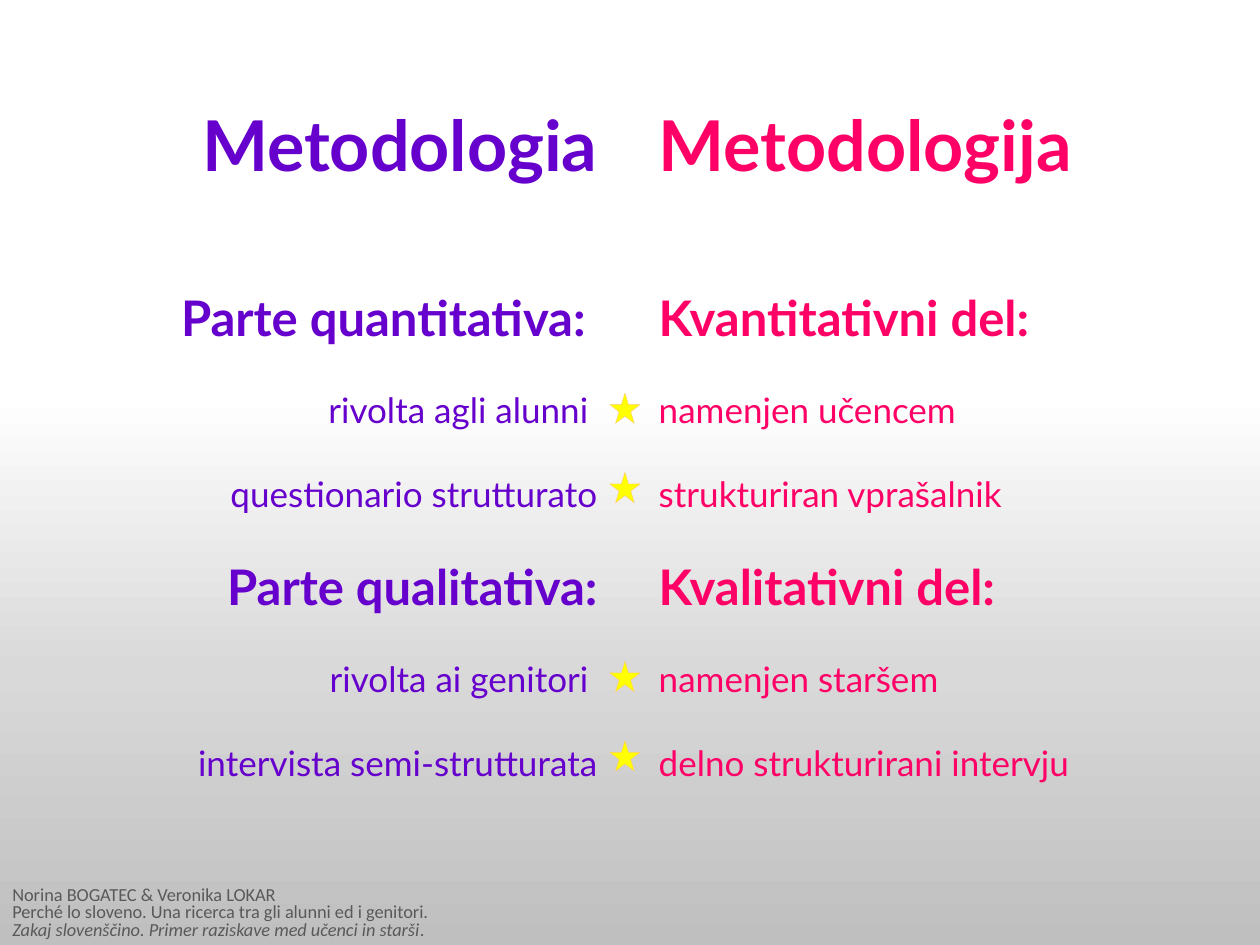
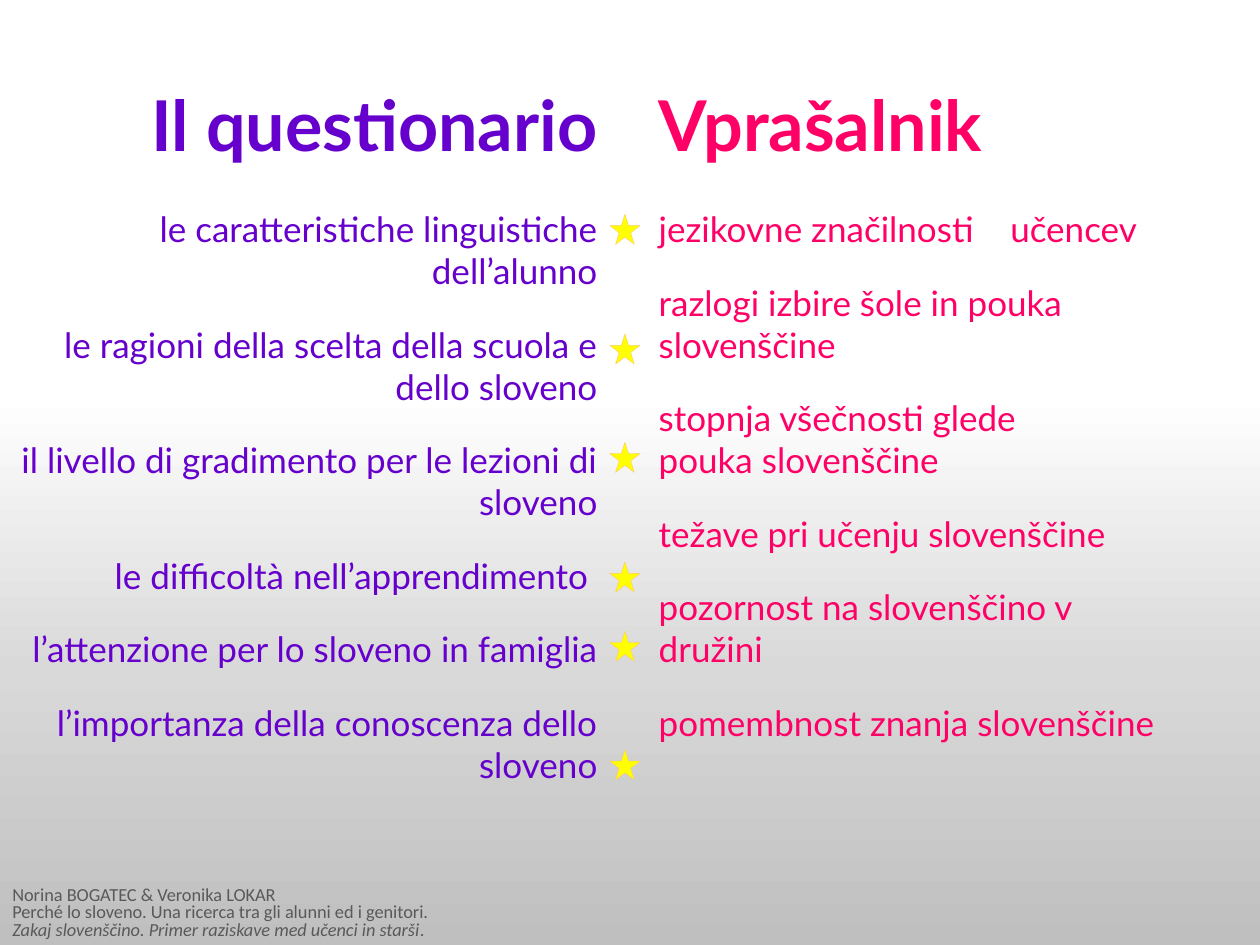
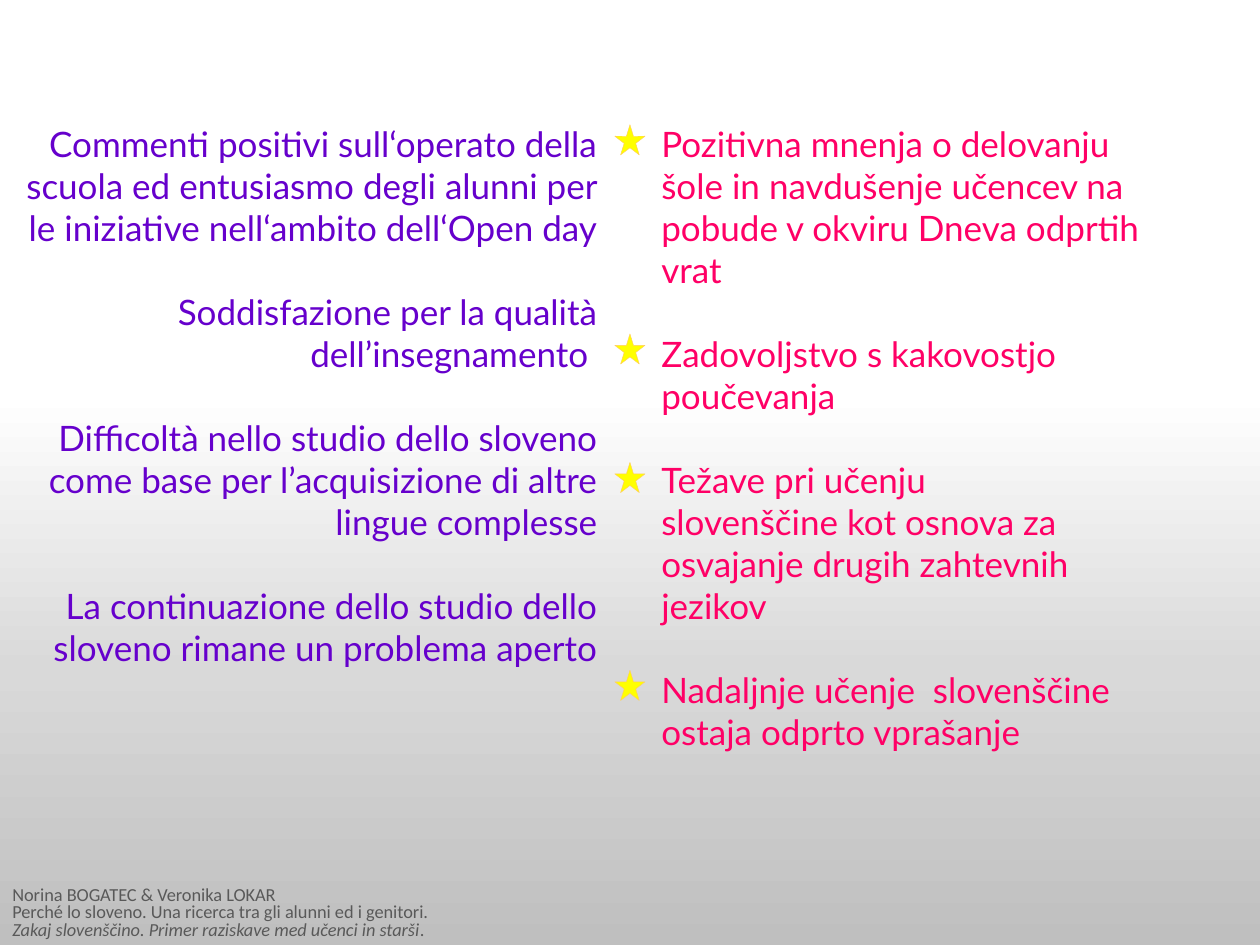
from copy import deepcopy

from pptx import Presentation
from pptx.dml.color import RGBColor
from pptx.enum.shapes import MSO_SHAPE as Shape
from pptx.enum.text import MSO_ANCHOR as Anchor, PP_ALIGN as Align
from pptx.oxml.ns import qn
from pptx.util import Inches, Pt
from lxml.etree import SubElement

WIDTH, HEIGHT = 10, 7.5
COLORS = {
    "italian": "6600CC",
    "slovene": "FF0066",
    "footer": "595959",
    "star": "FFFF00",
    "star_edge": "FFCC66",
    "paper": "FFFFFF",
    "band_middle": "D9D9D9",
    "band_end": "BFBFBF",
}
STYLES = {
    "title": {"size": Pt(40), "bold": True, "before": 0},
    "first_heading": {"size": Pt(28), "bold": True, "before": 58},
    "heading": {"size": Pt(28), "bold": True, "before": 24},
    "item": {"size": Pt(20), "bold": False, "before": 24},
    "close_item": {"size": Pt(20), "bold": False, "before": 18},
    "opening": {"size": Pt(20), "bold": False, "before": 0},
}
COLUMN_WIDTH = 4.84
RIGHT_COLUMN = 5.13
STAR_SIZE = 0.24
TAB_STOP = 2.79
FOOTER = [
    [("Norina BOGATEC & Veronika LOKAR", False)],
    [("Perché lo sloveno. Una ricerca tra gli alunni ed i genitori.", False)],
    [("Zakaj slovenščino. Primer raziskave med učenci in starši", True), (".", False)],
]

METHOD_STYLES = ["title", "first_heading", "item", "item", "heading", "item", "item"]
SLIDES = [
    {
        "top": 0.76, "height": 5.75, "right": RIGHT_COLUMN, "right_width": 4.34,
        "italian": list(zip(METHOD_STYLES, [
            "Metodologia",
            "Parte quantitativa: ",
            "rivolta agli alunni ",
            "questionario strutturato",
            "Parte qualitativa:",
            "rivolta ai genitori ",
            "intervista semi-strutturata",
        ])),
        "slovene": list(zip(METHOD_STYLES, [
            "Metodologija",
            "Kvantitativni del:",
            "namenjen učencem",
            "strukturiran vprašalnik",
            "Kvalitativni del:",
            "namenjen staršem",
            "delno strukturirani intervju",
        ])),
        "star_left": 4.84, "star_tops": [3.12, 3.75, 5.25, 5.88],
    },
    {
        "top": 0.6, "height": 5.75, "right": RIGHT_COLUMN, "right_width": 4.34,
        "italian": [
            ("title", "Il questionario"),
            ("item", "le caratteristiche linguistiche dell’alunno"),
            ("close_item", "le ragioni della scelta della scuola e dello sloveno"),
            ("close_item", "il livello di gradimento per le lezioni di sloveno"),
            ("close_item", "le difficoltà nell’apprendimento "),
            ("close_item", "l’attenzione per lo sloveno in famiglia"),
            ("close_item", "l’importanza della conoscenza dello sloveno"),
        ],
        "slovene": [
            ("title", "Vprašalnik"),
            ("item", "jezikovne značilnosti\tučencev"),
            ("close_item", "razlogi izbire šole in pouka slovenščine"),
            ("close_item", "stopnja všečnosti glede"),
            ("opening", "pouka slovenščine"),
            ("close_item", "težave pri učenju slovenščine"),
            ("close_item", "pozornost na slovenščino v družini"),
            ("close_item", "pomembnost znanja slovenščine"),
        ],
        "star_left": 4.84, "star_tops": [1.7, 2.65, 3.51, 4.46, 5.01, 5.95],
    },
    {
        "top": 0.92, "height": 5.43, "right": RIGHT_COLUMN + 0.02, "right_width": 4.18,
        "italian": [
            ("opening", "Commenti positivi sull‘operato della scuola ed entusiasmo "
                        "degli alunni per le iniziative nell‘ambito dell‘Open day"),
            ("item", "Soddisfazione per la qualità dell’insegnamento "),
            ("item", "Difficoltà nello studio dello sloveno come base per "
                     "l’acquisizione di altre lingue complesse"),
            ("item", "La continuazione dello studio dello sloveno rimane un problema aperto"),
        ],
        "slovene": [
            ("opening", "Pozitivna mnenja o delovanju šole in navdušenje učencev "
                        "na pobude v okviru Dneva odprtih vrat"),
            ("item", "Zadovoljstvo s kakovostjo poučevanja"),
            ("item", "Težave pri učenju"),
            ("opening", "slovenščine kot osnova za osvajanje drugih zahtevnih jezikov"),
            ("item", "Nadaljnje učenje  slovenščine ostaja odprto vprašanje"),
        ],
        "star_left": 4.88, "star_tops": [0.99, 2.65, 3.67, 5.32],
    },
]


def rgb(name):
    return RGBColor.from_string(COLORS[name])


def add_span(para, text, color, **formats):
    span = para.add_run()
    span.text = text
    span.font.color.rgb = rgb(color)
    for name, value in formats.items():
        setattr(span.font, name, value)


def add_frame(page, left, top, width, height):
    box = page.shapes.add_textbox(*map(Inches, (left, top, width, height)))
    box.text_frame.word_wrap = True
    return box.text_frame


def add_para(frame, index):
    return frame.paragraphs[0] if index == 0 else frame.add_paragraph()


def add_tab_stop(para):
    tabs = SubElement(para._p.get_or_add_pPr(), qn("a:tabLst"))
    SubElement(tabs, qn("a:tab"), pos=str(Inches(TAB_STOP)), algn="l")


def add_column(page, place, lines, color, align):
    frame = add_frame(page, *place)
    for index, (style, text) in enumerate(lines):
        formats = dict(STYLES[style])
        para = add_para(frame, index)
        para.alignment = align
        para.space_before = Pt(formats.pop("before"))
        if "\t" in text:
            add_tab_stop(para)
        add_span(para, text, color, name="Lato", **formats)


def add_band(page):
    top = HEIGHT * 5 / 12
    band = page.shapes.add_shape(
        Shape.RECTANGLE, 0, Inches(top), Inches(WIDTH), Inches(HEIGHT - top))
    band.shadow.inherit = False
    band.line.fill.background()
    band.fill.gradient()
    band.fill.gradient_angle = 270
    stop_list = band._element.spPr.find(qn("a:gradFill")).find(qn("a:gsLst"))
    stop_list.append(deepcopy(stop_list[0]))
    stops = zip(band.fill.gradient_stops, (0, 0.5, 1), ("paper", "band_middle", "band_end"))
    for stop, position, color in stops:
        stop.position = position
        stop.color.rgb = rgb(color)


def add_footer(page):
    frame = add_frame(page, 0, 7.01, WIDTH, 0.48)
    frame.vertical_anchor = Anchor.MIDDLE
    for index, spans in enumerate(FOOTER):
        para = add_para(frame, index)
        para.line_spacing = Pt(10)
        for text, italic in spans:
            add_span(para, text, "footer", name="Calibri", size=Pt(10.5), italic=italic)


def add_star(page, left, top):
    star = page.shapes.add_shape(
        Shape.STAR_5_POINT, *map(Inches, (left, top, STAR_SIZE, STAR_SIZE)))
    star.shadow.inherit = False
    star.fill.solid()
    star.fill.fore_color.rgb = rgb("star")
    star.line.color.rgb = rgb("star_edge")
    star.line.width = Pt(0.25)


def add_page(deck, content):
    page = deck.slides.add_slide(deck.slide_layouts[6])
    page.background.fill.solid()
    page.background.fill.fore_color.rgb = rgb("paper")
    top, height = content["top"], content["height"]
    add_band(page)
    add_column(page, (0, top, COLUMN_WIDTH, height),
               content["italian"], "italian", Align.RIGHT)
    add_footer(page)
    add_column(page, (content["right"], top, content["right_width"], height),
               content["slovene"], "slovene", Align.LEFT)
    for star_top in content["star_tops"]:
        add_star(page, content["star_left"], star_top)


def main():
    deck = Presentation()
    deck.slide_width, deck.slide_height = Inches(WIDTH), Inches(HEIGHT)
    for content in SLIDES:
        add_page(deck, content)
    deck.save("out.pptx")


if __name__ == "__main__":
    main()
